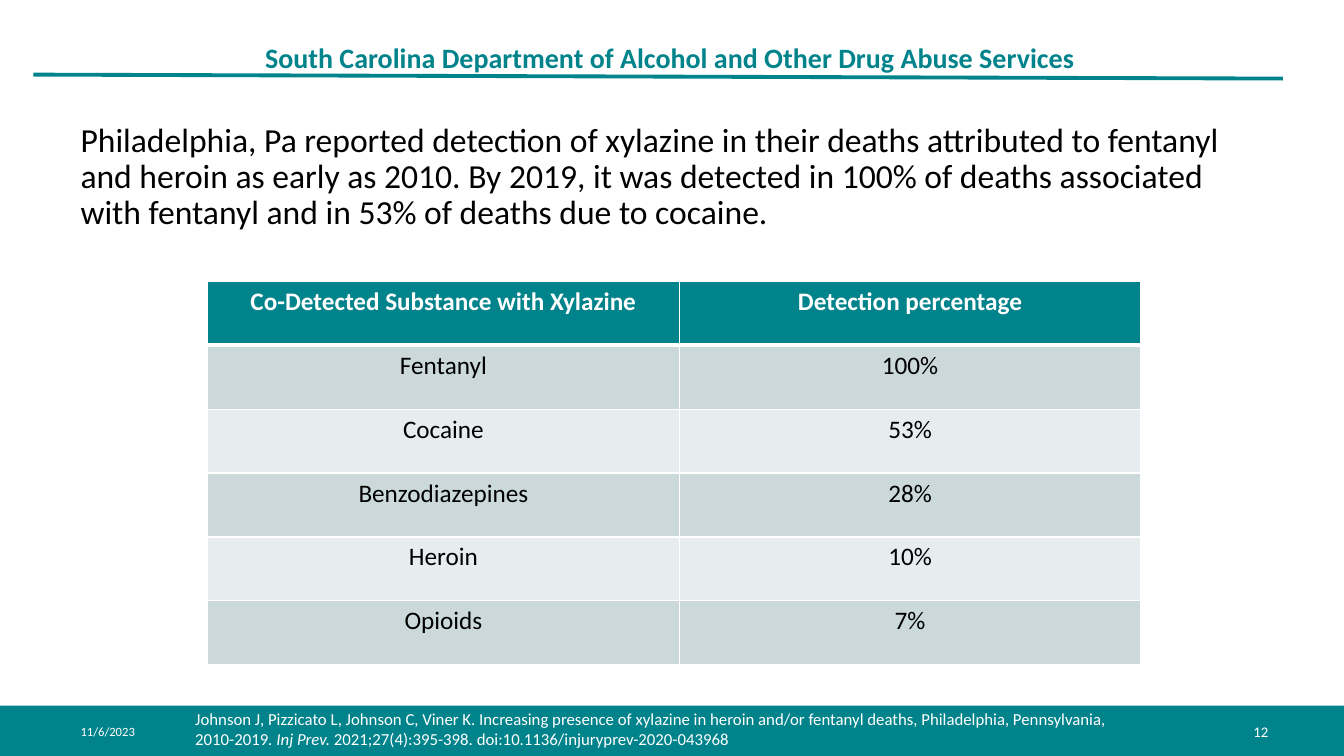
"""Builds the slide on xylazine detection in overdose deaths."""
from lxml import etree
from pptx import Presentation
from pptx.dml.color import RGBColor
from pptx.enum.shapes import MSO_CONNECTOR, MSO_SHAPE
from pptx.enum.text import MSO_ANCHOR, PP_ALIGN
from pptx.oxml.ns import qn
from pptx.util import Cm, Pt

STRAIGHT = MSO_CONNECTOR.STRAIGHT
RECTANGLE = MSO_SHAPE.RECTANGLE
TOP, MIDDLE = MSO_ANCHOR.TOP, MSO_ANCHOR.MIDDLE
LEFT, CENTER, RIGHT = PP_ALIGN.LEFT, PP_ALIGN.CENTER, PP_ALIGN.RIGHT

FONT = "Calibri"
COLORS = {"teal": "00838B", "white": "FFFFFF", "black": "000000",
          "band": "CCD9DA", "light": "E7EDEE"}
DETECTIONS = [
    ("Co-Detected Substance with Xylazine", "Detection percentage"),
    ("Fentanyl", "100%"),
    ("Cocaine", "53%"),
    ("Benzodiazepines", "28%"),
    ("Heroin", "10%"),
    ("Opioids", "7%"),
]


class SlideBuilder:
    def __init__(self, presentation):
        self.slide = presentation.slides.add_slide(presentation.slide_layouts[6])
        self.shapes = self.slide.shapes

    def color(self, name):
        return RGBColor.from_string(COLORS[name])

    def style(self, font, size, color, bold=False, italic=False):
        font.name, font.size = FONT, Pt(size)
        font.bold, font.italic = bold, italic
        font.color.rgb = self.color(color)

    def text(self, box, parts, size, color="white", bold=False, align=LEFT,
             anchor=TOP, spacing=1.0, insets=(0.25, 0.13)):
        shape = self.shapes.add_textbox(*map(Cm, box))
        frame = shape.text_frame
        frame.word_wrap = True
        frame.vertical_anchor = anchor
        frame.margin_left = frame.margin_right = Cm(insets[0])
        frame.margin_top = frame.margin_bottom = Cm(insets[1])
        paragraph = frame.paragraphs[0]
        paragraph.alignment = align
        paragraph.line_spacing = spacing
        for part, italic in parts:
            run = paragraph.add_run()
            run.text = part
            self.style(run.font, size, color, bold, italic)

    def bar(self, box, color):
        shape = self.shapes.add_shape(RECTANGLE, *map(Cm, box))
        shape.shadow.inherit = False
        shape.fill.solid()
        shape.fill.fore_color.rgb = self.color(color)
        shape.line.fill.background()

    def rule(self, ends, color, width):
        connector = self.shapes.add_connector(STRAIGHT, *map(Cm, ends))
        connector.line.color.rgb = self.color(color)
        connector.line.width = Pt(width)
        etree.SubElement(connector._element.spPr, qn("a:effectLst"))

    def border(self, cell, side, width):
        properties = cell._tc.get_or_add_tcPr()
        line = etree.SubElement(properties, qn(f"a:ln{side}"), w=str(Pt(width)))
        fill = etree.SubElement(line, qn("a:solidFill"))
        etree.SubElement(fill, qn("a:srgbClr"), val=COLORS["white"])

    def table(self, left, top, widths, row_height, rows, size):
        box = (left, top, sum(widths), row_height * len(rows))
        table = self.shapes.add_table(len(rows), len(widths), *map(Cm, box)).table
        for column, width in zip(table.columns, widths):
            column.width = Cm(width)
        for row_index, values in enumerate(rows):
            table.rows[row_index].height = Cm(row_height)
            header = row_index == 0
            fill = "teal" if header else "band" if row_index % 2 else "light"
            for column_index, value in enumerate(values):
                cell = table.cell(row_index, column_index)
                cell.text_frame.text = value
                paragraph = cell.text_frame.paragraphs[0]
                paragraph.alignment = CENTER
                self.style(paragraph.runs[0].font, size,
                           "white" if header else "black", header)
                for side in "LRTB":
                    thick = (header and side == "B") or (row_index == 1 and side == "T")
                    self.border(cell, side, 3 if thick else 1)
                cell.fill.solid()
                cell.fill.fore_color.rgb = self.color(fill)


def main():
    presentation = Presentation()
    presentation.slide_width, presentation.slide_height = Cm(33.87), Cm(19.05)
    builder = SlideBuilder(presentation)
    builder.text((6.5, 0.71, 25.93, 1.6),
                 [("South Carolina Department of Alcohol and Other Drug Abuse Services", False)],
                 20, "teal", bold=True, anchor=MIDDLE, spacing=0.9, insets=(0.18, 0.1))
    builder.rule((0.84, 1.88, 32.33, 1.98), "teal", 2.75)
    builder.bar((0, 17.78, 33.87, 1.27), "teal")
    builder.text((1.78, 2.97, 30.43, 3.2),
                 [("Philadelphia, Pa reported detection of xylazine in their deaths attributed "
                   "to fentanyl and heroin as early as 2010. By 2019, it was detected in 100% "
                   "of deaths associated with fentanyl and in 53% of deaths due to cocaine.",
                   False)],
                 24, "black", spacing=0.9)
    builder.text((1.78, 17.93, 2.9, 1.02), [("11/6/2023", False)], 9, anchor=MIDDLE)
    builder.text((28.58, 17.93, 3.63, 1.02), [("12", False)], 10.5,
                 align=RIGHT, anchor=MIDDLE)
    builder.table(5.23, 7.09, (11.89, 11.63), 1.61, DETECTIONS, 18)
    builder.text((4.67, 17.73, 24.54, 1.27),
                 [("Johnson J, Pizzicato L, Johnson C, Viner K. Increasing presence of xylazine "
                   "in heroin and/or fentanyl deaths, Philadelphia, Pennsylvania, 2010-2019",
                   False),
                  (". Inj Prev.", True),
                  (" 2021;27(4):395-398. doi:10.1136/injuryprev-2020-043968", False)],
                 12)
    presentation.save("out.pptx")


if __name__ == "__main__":
    main()
